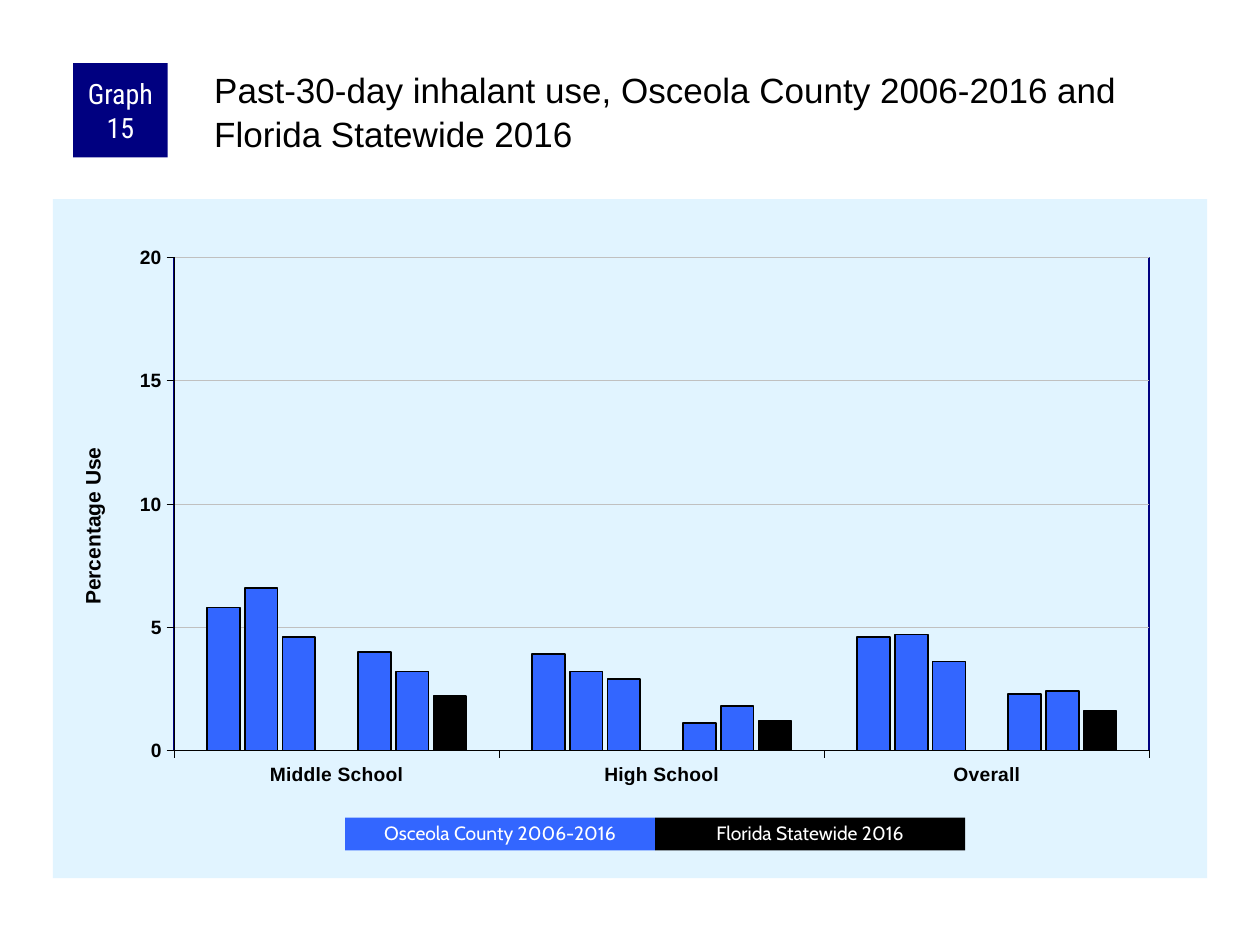
from lxml import etree
from pptx import Presentation
from pptx.chart.data import CategoryChartData
from pptx.dml.color import RGBColor
from pptx.enum.chart import XL_CHART_TYPE, XL_TICK_MARK
from pptx.enum.shapes import MSO_SHAPE
from pptx.enum.text import MSO_ANCHOR, PP_ALIGN
from pptx.oxml import parse_xml
from pptx.oxml.ns import nsdecls, qn
from pptx.util import Inches, Pt

COLUMN = XL_CHART_TYPE.COLUMN_CLUSTERED
OUT = XL_TICK_MARK.OUTSIDE
RECT = MSO_SHAPE.RECTANGLE
TOP, MIDDLE = MSO_ANCHOR.TOP, MSO_ANCHOR.MIDDLE
LEFT, CENTER = PP_ALIGN.LEFT, PP_ALIGN.CENTER

COLORS = {"panel": "E1F4FF", "county": "3366FF", "state": "000000",
          "navy": "000080", "ink": "000000", "grid": "C0C0C0", "white": "FFFFFF"}
GROUPS = ["Middle School", "High School", "Overall"]
# One row per survey; the row of zeros makes the gap between bars
SURVEYS = [(5.8, 3.9, 4.6), (6.6, 3.2, 4.7), (4.6, 2.9, 3.6), (0, 0, 0),
           (4, 1.1, 2.3), (3.2, 1.8, 2.4), (2.2, 1.2, 1.6)]
KEYS = [("Osceola County 2006-2016", "county"), ("Florida Statewide 2016", "state")]


def color(name):
    return RGBColor.from_string(COLORS[name])


def style(font, face, size, ink, bold=False):
    font.name, font.size, font.bold = face, Pt(size), bold
    font.color.rgb = color(ink)


def rule(line, ink, width):
    line.color.rgb = color(ink)
    line.width = Pt(width)


def place(shape, left, top, width, height):
    shape.left, shape.top = Inches(left), Inches(top)
    shape.width, shape.height = Inches(width), Inches(height)


def add_box(slide, text, at, fill, face, size, spacing=1.0, inset=0.1):
    box = slide.shapes.add_shape(RECT, *map(Inches, at))
    box.shadow.inherit = False
    box.fill.solid()
    box.fill.fore_color.rgb = color(fill)
    box.line.fill.background()
    frame = box.text_frame
    frame.word_wrap, frame.vertical_anchor = True, MIDDLE
    frame.margin_left = frame.margin_right = Inches(inset)
    frame.margin_top = frame.margin_bottom = 0
    para = frame.paragraphs[0]
    para.text, para.alignment, para.line_spacing = text, CENTER, spacing
    style(para.font, face, size, "white")


def set_title(slide, text):
    title = slide.shapes.title
    place(title, 1.67, 0.5, 7.92, 0.83)
    frame = title.text_frame
    frame.word_wrap, frame.vertical_anchor = True, TOP
    frame.margin_left = frame.margin_top = Inches(0.03)
    frame.margin_right = frame.margin_bottom = 0
    para = frame.paragraphs[0]
    para.text, para.alignment, para.line_spacing = text, LEFT, 1.05
    style(para.font, "Arial", 20, "ink")


def set_layout(parent, index, inner=False, **shares):
    """Fix a chart part by shares of the chart's size."""
    for old in parent.findall(qn("c:layout")):
        parent.remove(old)
    layout = parse_xml(f"<c:layout {nsdecls('c')}><c:manualLayout/></c:layout>")
    values = {"layoutTarget": "inner"} if inner else {}
    values.update(xMode="edge", yMode="edge", **shares)
    for tag, value in values.items():
        etree.SubElement(layout[0], qn(f"c:{tag}"), val=str(value))
    parent.insert(index, layout)


def fill_part(parent, xml):
    return parse_xml(f"<c:spPr {nsdecls('c', 'a')}>{xml}</c:spPr>")


def solid(name):
    return f'<a:solidFill><a:srgbClr val="{COLORS[name]}"/></a:solidFill>'


def set_areas(chart):
    """Colour the chart's panel and frame its plot."""
    space = chart.element
    plot = space.chart.plotArea
    set_layout(plot, 0, True, x=0.105, y=0.086, w=0.845, h=0.726)
    plot.append(fill_part(plot, f'<a:noFill/><a:ln w="12700">{solid("navy")}</a:ln>'))
    space.chart.addnext(fill_part(space, f'{solid("panel")}<a:ln><a:noFill/></a:ln>'))


def set_axes(chart):
    for axis in (chart.category_axis, chart.value_axis):
        axis.major_tick_mark = OUT
        style(axis.tick_labels.font, "Arial", 11, "ink", True)
        rule(axis.format.line, "ink", 0.25)
    axis = chart.value_axis
    axis.minimum_scale, axis.maximum_scale, axis.major_unit = 0, 20, 5
    rule(axis.major_gridlines.format.line, "grid", 0.25)
    axis.tick_labels.number_format = "0"
    axis.tick_labels.number_format_is_linked = False
    para = axis.axis_title.text_frame.paragraphs[0]
    para.text = "Percentage Use"
    style(para.font, "Arial", 12, "ink", True)
    para._p.getparent().find(qn("a:bodyPr")).set("rot", "-5400000")
    set_layout(axis.axis_title._element, 1, x=0.02, y=0.36)


def add_bars(slide):
    data = CategoryChartData()
    data.categories = GROUPS
    for number, values in enumerate(SURVEYS, 1):
        data.add_series(f"Series {number}", values)
    at = map(Inches, (0.42, 1.58, 9.16, 5.39))
    chart = slide.shapes.add_chart(COLUMN, *at, data).chart
    chart.has_legend = chart.has_title = False
    style(chart.font, "Arial", 8, "ink")
    plot = chart.plots[0]
    plot.gap_width, plot.overlap, plot.vary_by_categories = 200, -15, False
    for series in plot.series:
        last = series.name == f"Series {len(SURVEYS)}"
        series.format.fill.solid()
        series.format.fill.fore_color.rgb = color("state" if last else "county")
        rule(series.format.line, "ink", 1)
    set_axes(chart)
    set_areas(chart)


def main():
    deck = Presentation()
    deck.slide_width, deck.slide_height = Inches(10), Inches(7.5)
    slide = deck.slides.add_slide(deck.slide_layouts[5])
    set_title(slide, "Past-30-day inhalant use, Osceola County 2006-2016 "
                     "and Florida Statewide 2016")
    add_bars(slide)
    add_box(slide, "Graph 15", (0.58, 0.5, 0.75, 0.75), "navy",
            "Roboto Condensed", 16, inset=0.05)
    for col, (text, fill) in enumerate(KEYS):
        add_box(slide, text, (2.74 + col * 2.46, 6.49, 2.46, 0.26), fill,
                "Cabin", 11, spacing=0.9)
    deck.save("out.pptx")


if __name__ == "__main__":
    main()
